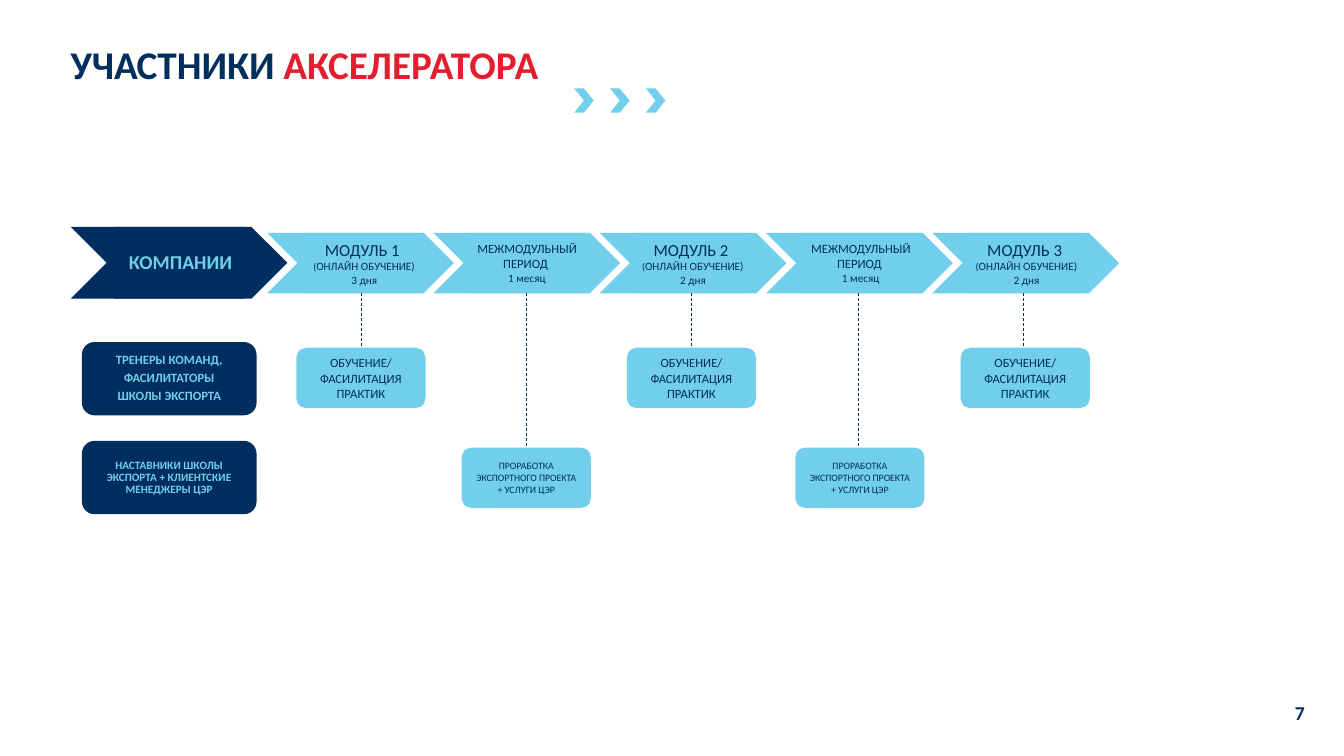
"""Build the slide that maps accelerator stages to their participants."""
import dataclasses
import typing

import lxml.etree
import pptx
import pptx.dml.color
import pptx.enum.dml
import pptx.enum.shapes
import pptx.enum.text
import pptx.oxml.ns
import pptx.util

Pt = pptx.util.Pt
Kind = pptx.enum.shapes.MSO_SHAPE
Anchor = pptx.enum.text.MSO_ANCHOR
Align = pptx.enum.text.PP_ALIGN

COLORS = {"navy": "002E5E", "sky": "71CFEB", "red": "E21F2E"}
FONT = "Calibri"


class Box(typing.NamedTuple):
    left: float
    top: float
    width: float
    height: float


class Run(typing.NamedTuple):
    text: str
    size: float | None = None
    color: str | None = None


@dataclasses.dataclass(frozen=True)
class Line:
    runs: tuple[Run, ...]
    size: float | None
    color: str = "navy"
    bold: bool = False
    align: Align = Align.CENTER
    spacing: float | Pt | None = None
    after: float | None = None


@dataclasses.dataclass(frozen=True)
class Stage:
    label_left: float
    label_width: float
    label: tuple[Line, ...]
    axis: float
    task_left: float
    task_top: float
    task: tuple[Line, ...]


@dataclasses.dataclass(frozen=True)
class Role:
    top: float
    lines: tuple[Line, ...]


def plain(text: str, size: float) -> Line:
    """Return a centred navy line made of one run."""
    return Line((Run(text),), size)


def bold_sky(text: str, size: float, after: float | None = None) -> Line:
    """Return a bold sky-blue line with tight spacing."""
    return Line((Run(text),), size, "sky", True, spacing=0.9, after=after)


def module(number: int, days: str, label_left: float, axis: float, task_left: float) -> Stage:
    """Return a training module stage."""
    label = (
        plain(f"МОДУЛЬ {number} ", 12),
        Line((Run("(", 7), Run("ОНЛАЙН ОБУЧЕНИЕ)", 8)), None),
        plain(days, 8),
    )
    task = (plain("ОБУЧЕНИЕ/", 9), plain("ФАСИЛИТАЦИЯ ПРАКТИК", 9))
    return Stage(label_left, 84.24, label, axis, task_left, 248.4, task)


def period(label_left: float, axis: float, task_left: float) -> Stage:
    """Return a stage between two modules."""
    label = (plain("МЕЖМОДУЛЬНЫЙ ПЕРИОД ", 9), plain("1 месяц", 8))
    task = (plain("ПРОРАБОТКА ЭКСПОРТНОГО ПРОЕКТА + УСЛУГИ ЦЭР", 7),)
    return Stage(label_left, 86.4, label, axis, task_left, 319.7, task)


STAGES = (
    module(1, "3 дня", 217.4, 257.8, 211.7),
    period(332.6, 375.8, 329.8),
    module(2, "2 дня", 452.2, 493.5, 447.8),
    period(571, 613.4, 568.1),
    module(3, "2 дня", 690.5, 731.2, 686.2),
)
ROLES = (
    Role(244.8, tuple(
        bold_sky(text, 9, 3)
        for text in ("ТРЕНЕРЫ КОМАНД,", "ФАСИЛИТАТОРЫ", "ШКОЛЫ ЭКСПОРТА")
    )),
    Role(315.4, tuple(
        bold_sky(text, 8)
        for text in ("НАСТАВНИКИ ШКОЛЫ", "ЭКСПОРТА + КЛИЕНТСКИЕ", "МЕНЕДЖЕРЫ ЦЭР")
    )),
)
COMPANIES = (bold_sky("КОМПАНИИ", 14, 5),)
HEADING = (Line(
    (Run("УЧАСТНИКИ "), Run("АКСЕЛЕРАТОРА", color="red")),
    28, bold=True, align=Align.LEFT, spacing=Pt(37),
),)
PAGE_NUMBER = (Line((Run("7"),), 14, bold=True),)

STAGE_LEFT, STAGE_TOP = 190.8, 166.3
STAGE_WIDTH, STAGE_HEIGHT, STAGE_PITCH = 133.4, 43.2, 118.8
TASK_WIDTH, TASK_HEIGHT = 92.3, 43.2


def rgb(name: str) -> pptx.dml.color.RGBColor:
    """Return a palette colour."""
    return pptx.dml.color.RGBColor.from_string(COLORS[name])


def write(frame, lines: tuple[Line, ...], anchor: Anchor, insets: tuple | None) -> None:
    """Fill a text frame with formatted lines."""
    frame.word_wrap = True
    frame.vertical_anchor = anchor
    if insets is not None:
        (frame.margin_left, frame.margin_top,
         frame.margin_right, frame.margin_bottom) = map(Pt, insets)
    for index, line in enumerate(lines):
        paragraph = frame.add_paragraph() if index else frame.paragraphs[0]
        paragraph.alignment = line.align
        if line.spacing is not None:
            paragraph.line_spacing = line.spacing
        if line.after is not None:
            paragraph.space_after = Pt(line.after)
        paragraph.font.name = FONT
        paragraph.font.bold = line.bold
        paragraph.font.color.rgb = rgb(line.color)
        if line.size is not None:
            paragraph.font.size = Pt(line.size)
        for part in line.runs:
            run = paragraph.add_run()
            run.text = part.text
            if part.size is not None:
                run.font.size = Pt(part.size)
            if part.color is not None:
                run.font.color.rgb = rgb(part.color)


def add_text(slide, box: Box, lines: tuple[Line, ...], anchor: Anchor) -> None:
    """Add a text box without insets."""
    write(slide.shapes.add_textbox(*map(Pt, box)).text_frame, lines, anchor, (0, 0, 0, 0))


def add_block(slide, kind: Kind, box: Box, fill: str, lines: tuple[Line, ...] = (),
              insets: tuple | None = None, outlined: bool = False) -> None:
    """Add a filled shape, with text if there is any."""
    block = slide.shapes.add_shape(kind, *map(Pt, box))
    block.shadow.inherit = False
    block.fill.solid()
    block.fill.fore_color.rgb = rgb(fill)
    if outlined:
        block.line.color.rgb = rgb(fill)
        block.line.width = Pt(1)
    else:
        block.line.fill.background()
    if lines:
        write(block.text_frame, lines, Anchor.MIDDLE, insets)


def add_link(slide, axis: float, top: float, bottom: float) -> None:
    """Add a thin dashed vertical line."""
    link = slide.shapes.add_connector(
        pptx.enum.shapes.MSO_CONNECTOR.STRAIGHT, Pt(axis), Pt(top), Pt(axis), Pt(bottom))
    link.line.color.rgb = rgb("navy")
    link.line.width = Pt(0.5)
    link.line.dash_style = pptx.enum.dml.MSO_LINE.DASH
    lxml.etree.SubElement(link._element.spPr, pptx.oxml.ns.qn("a:effectLst"))


def main() -> None:
    """Draw and save the slide."""
    deck = pptx.Presentation()
    deck.slide_width, deck.slide_height = Pt(960), Pt(540)
    slide = deck.slides.add_slide(deck.slide_layouts[6])

    add_text(slide, Box(50.4, 30.2, 748.8, 32.4), HEADING, Anchor.BOTTOM)
    add_text(slide, Box(913.7, 500.4, 29.5, 27.4), PAGE_NUMBER, Anchor.TOP)
    for index in range(3):
        add_block(slide, Kind.CHEVRON, Box(410.2 + index * 25.6, 63.2, 13.9, 17.3), "sky")

    add_block(slide, Kind.CHEVRON, Box(50.4, 162, 154.8, 51.4), "navy")
    add_block(slide, Kind.RECTANGLE, Box(81.4, 162, 92.9, 51.4), "navy",
              COMPANIES, (2.2, 1.4, 0, 1.4))
    for index, stage in enumerate(STAGES):
        left = STAGE_LEFT + index * STAGE_PITCH
        add_block(slide, Kind.CHEVRON, Box(left, STAGE_TOP, STAGE_WIDTH, STAGE_HEIGHT), "sky")
        add_block(slide, Kind.RECTANGLE,
                  Box(stage.label_left, STAGE_TOP, stage.label_width, STAGE_HEIGHT),
                  "sky", stage.label, (1.4, 0.7, 0, 0.7))
        add_link(slide, stage.axis, STAGE_TOP + STAGE_HEIGHT, stage.task_top)
        add_block(slide, Kind.ROUNDED_RECTANGLE,
                  Box(stage.task_left, stage.task_top, TASK_WIDTH, TASK_HEIGHT),
                  "sky", stage.task)
    for role in ROLES:
        add_block(slide, Kind.ROUNDED_RECTANGLE, Box(59, role.top, 123.8, 51.4),
                  "navy", role.lines, outlined=True)
    deck.save("out.pptx")


if __name__ == "__main__":
    main()
